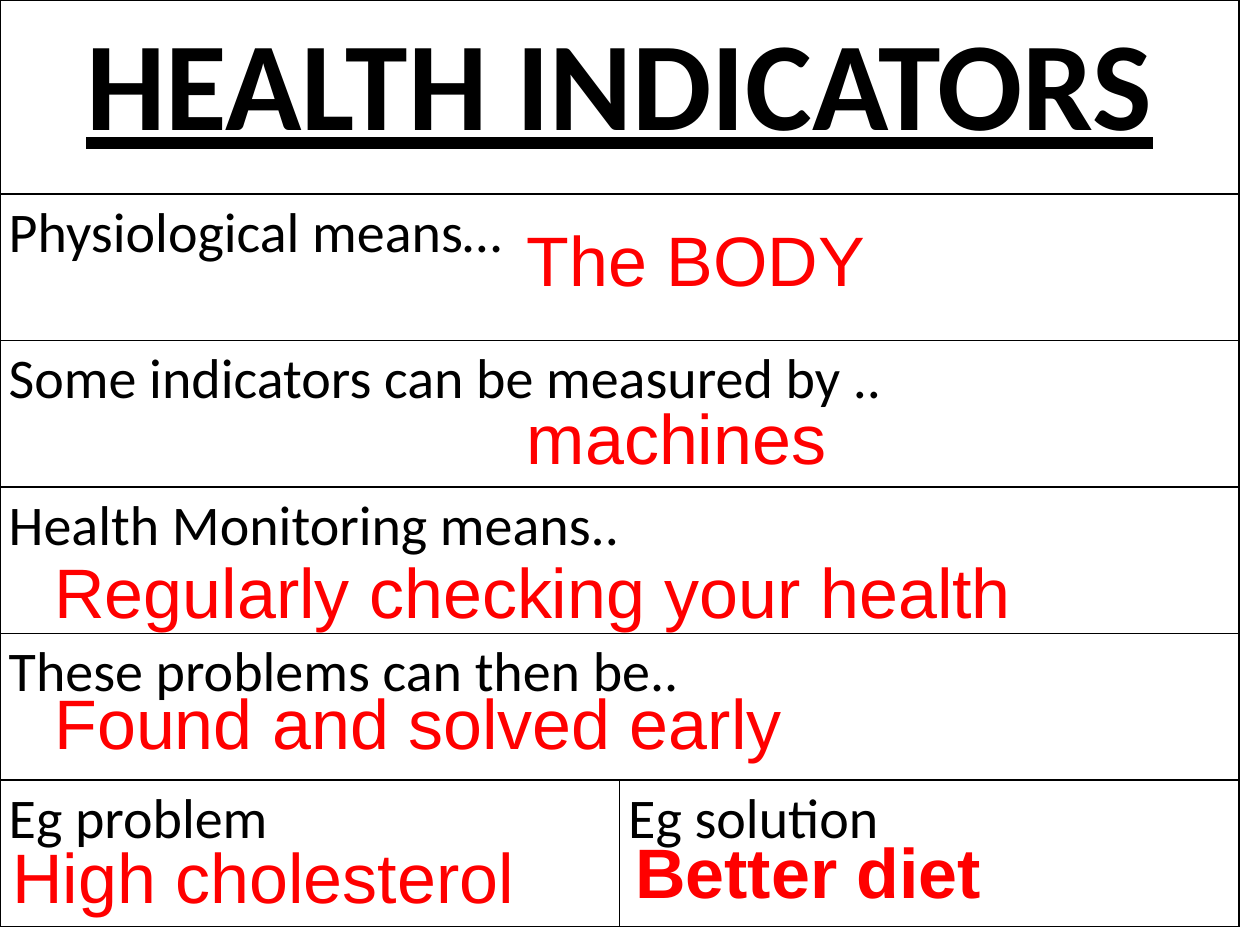
import pptx
import pptx.util
import pptx.dml.color
import pptx.enum.text
import pptx.oxml
import pptx.oxml.ns

Pt = pptx.util.Pt
ALIGN = pptx.enum.text.PP_ALIGN
COLORS = {"ink": "000000", "answer": "FF0000", "paper": "FFFFFF"}


class Worksheet:
    table_font = "Calibri"
    answer_font = "Arial"

    def __init__(self, prs):
        self.slide = prs.slides.add_slide(prs.slide_layouts[6])

    def color(self, name):
        return pptx.dml.color.RGBColor.from_string(COLORS[name])

    def set_text(self, tf, text, font, size, color, bold=False, underline=False):
        tf.text = text
        p = tf.paragraphs[0]
        r = p.runs[0]
        r.font.name = font
        r.font.size = Pt(size)
        r.font.bold = bold
        r.font.underline = underline
        r.font.color.rgb = self.color(color)
        return p

    def border(self, cell):
        tcPr = cell._tc.get_or_add_tcPr()
        for i, side in enumerate(("lnL", "lnR", "lnT", "lnB")):
            tcPr.insert(i, pptx.oxml.parse_xml(
                f'<a:{side} {pptx.oxml.ns.nsdecls("a")} w="{Pt(1)}"><a:solidFill>'
                f'<a:srgbClr val="{COLORS["ink"]}"/></a:solidFill></a:{side}>'))

    def table(self, rows, widths, heights):
        shape = self.slide.shapes.add_table(
            len(rows), len(widths), 0, 0, Pt(sum(widths)), Pt(sum(heights)))
        tbl = shape.table
        tbl.first_row = tbl.horz_banding = False
        for column, width in zip(tbl.columns, widths):
            column.width = Pt(width)
        for row, height in zip(tbl.rows, heights):
            row.height = Pt(height)
        for cell in tbl.iter_cells():
            cell.margin_left = cell.margin_right = Pt(5)
            cell.margin_top = cell.margin_bottom = 0
            cell.fill.solid()
            cell.fill.fore_color.rgb = self.color("paper")
            self.border(cell)
        for i, texts in enumerate(rows):
            if len(texts) == 1:
                tbl.cell(i, 0).merge(tbl.cell(i, len(widths) - 1))
            for j, text in enumerate(texts):
                heading = i == 0
                p = self.set_text(tbl.cell(i, j).text_frame, text, self.table_font,
                                  72 if heading else 32, "ink", heading, heading)
                p.alignment = ALIGN.CENTER if heading else ALIGN.LEFT
                p.line_spacing = 1.07

    def answer(self, text, left, top, width, bold=False):
        s = self.slide.shapes.add_textbox(Pt(left), Pt(top), Pt(width), Pt(55.7))
        tf = s.text_frame
        tf.word_wrap = True
        tf.auto_size = pptx.enum.text.MSO_AUTO_SIZE.SHAPE_TO_FIT_TEXT
        self.set_text(tf, text, self.answer_font, 40, "answer", bold)


def main():
    prs = pptx.Presentation()
    prs.slide_width, prs.slide_height = Pt(720), Pt(540)
    sheet = Worksheet(prs)
    prompts = [
        ["HEALTH INDICATORS"],
        ["Physiological means…"],
        ["Some indicators can be measured by .."],
        ["Health Monitoring means.."],
        ["These problems can then be.."],
        ["Eg problem", "Eg solution"],
    ]
    sheet.table(prompts, [354, 354], [111] + [83.7] * 5)
    sheet.answer("The BODY", 294, 120, 366)
    sheet.answer("machines", 294, 222, 366)
    sheet.answer("Regularly checking your health", 24, 310, 654)
    sheet.answer("Found and solved early", 24, 384.5, 624)
    sheet.answer("High cholesterol", 0, 473, 366)
    sheet.answer("Better diet", 356, 470, 366, bold=True)
    prs.save("out.pptx")


if __name__ == "__main__":
    main()
